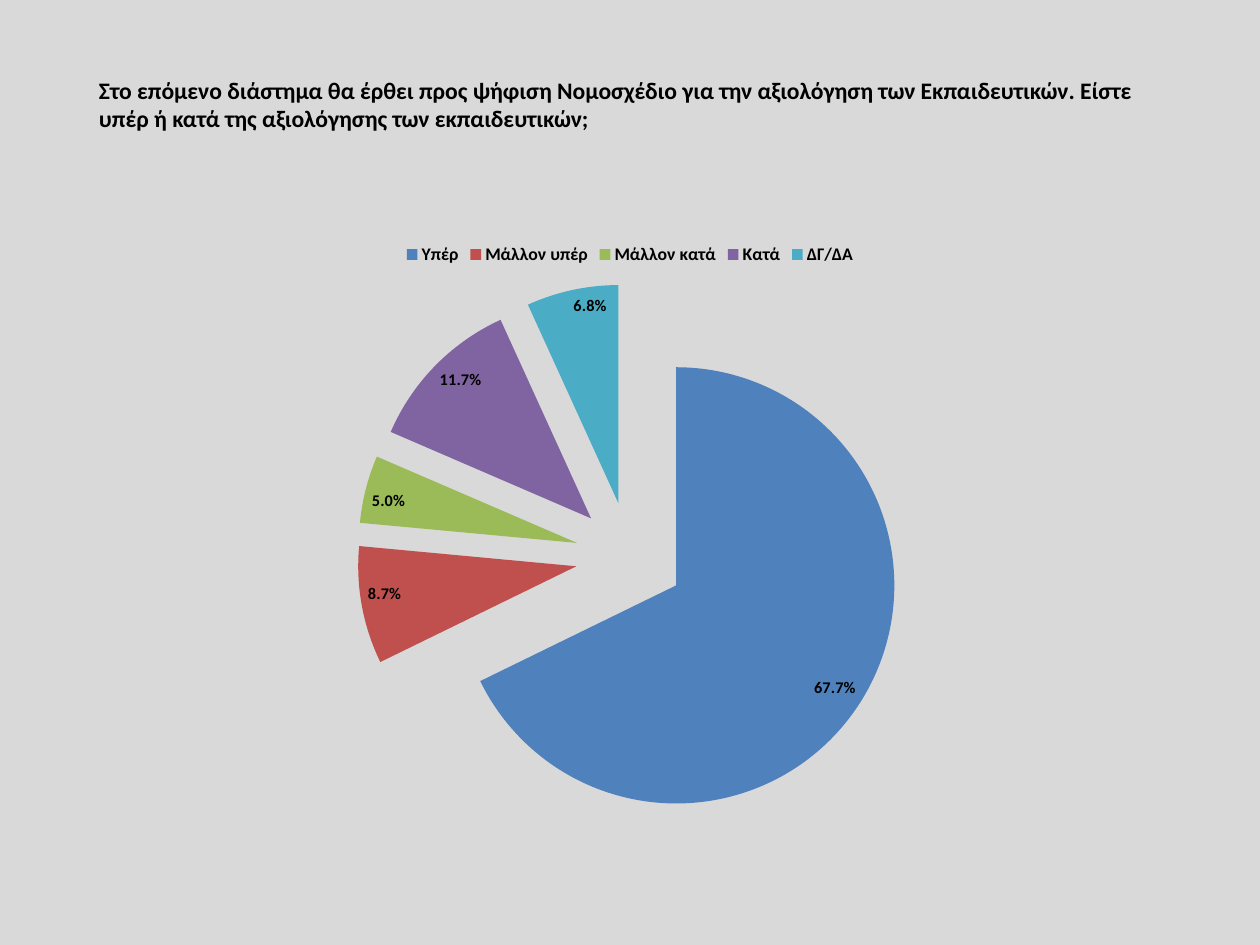
from lxml import etree
from pptx import Presentation
from pptx.chart.data import CategoryChartData
from pptx.dml.color import RGBColor
from pptx.enum.chart import XL_CHART_TYPE as ChartType
from pptx.enum.chart import XL_LABEL_POSITION as LabelPos
from pptx.enum.chart import XL_LEGEND_POSITION as LegendPos
from pptx.enum.text import MSO_ANCHOR
from pptx.oxml.ns import qn
from pptx.util import Inches, Pt

QUESTION = ("Στο επόμενο διάστημα θα έρθει προς ψήφιση Νομοσχέδιο για την "
            "αξιολόγηση των Εκπαιδευτικών. Είστε υπέρ ή κατά της αξιολόγησης "
            "των εκπαιδευτικών;")
ANSWERS = [
    ("Υπέρ", 67.7, "4F81BD"),
    ("Μάλλον υπέρ", 8.7, "C0504D"),
    ("Μάλλον κατά", 5.0, "9BBB59"),
    ("Κατά", 11.7, "8064A2"),
    ("ΔΓ/ΔΑ", 6.8, "4BACC6"),
]


def rgb(value):
    return RGBColor.from_string(value)


class PollSlide:
    font_name = "Calibri"
    text_color = "000000"
    background = "D9D9D9"

    def __init__(self, prs):
        self.slide = prs.slides.add_slide(prs.slide_layouts[6])
        fill = self.slide.background.fill
        fill.solid()
        fill.fore_color.rgb = rgb(self.background)

    def style_font(self, font, size, bold=True):
        font.name = self.font_name
        font.size = Pt(size)
        font.bold = bold
        font.color.rgb = rgb(self.text_color)

    def title(self, text, left, top, width, height):
        box = self.slide.shapes.add_textbox(
            Inches(left), Inches(top), Inches(width), Inches(height))
        tf = box.text_frame
        tf.word_wrap = True
        tf.vertical_anchor = MSO_ANCHOR.MIDDLE
        tf.margin_left = tf.margin_right = Inches(0.12)
        tf.margin_top = tf.margin_bottom = Inches(0.06)
        tf.text = text
        self.style_font(tf.paragraphs[0].runs[0].font, 16)

    def exploded_pie(self, answers, left, top, width, height, explosion):
        names, values, colors = zip(*answers)
        data = CategoryChartData()
        data.categories = names
        data.add_series("Series 1", values)
        chart = self.slide.shapes.add_chart(
            ChartType.PIE, Inches(left), Inches(top),
            Inches(width), Inches(height), data).chart
        chart.has_title = False
        self.style_font(chart.font, 10, bold=False)

        chart.has_legend = True
        chart.legend.position = LegendPos.TOP
        chart.legend.include_in_layout = False
        self.style_font(chart.legend.font, 12)

        plot = chart.plots[0]
        plot.vary_by_categories = True
        series = plot.series[0]
        for i, color in enumerate(colors):
            fill = series.points[i].format.fill
            fill.solid()
            fill.fore_color.rgb = rgb(color)
        # The schema wants the explosion ahead of the data points
        element = etree.Element(qn("c:explosion"), val=str(explosion))
        series._element.find(qn("c:dPt")).addprevious(element)

        plot.has_data_labels = True
        labels = plot.data_labels
        labels.show_value = True
        labels.show_percentage = False
        labels.number_format = '0.0"%"'
        labels.number_format_is_linked = False
        labels.position = LabelPos.INSIDE_END
        self.style_font(labels.font, 11)


def main():
    prs = Presentation()
    prs.slide_width = Inches(11.84)
    prs.slide_height = Inches(8.88)
    poll = PollSlide(prs)
    poll.title(QUESTION, 0.81, 0.47, 10.21, 1.01)
    poll.exploded_pie(ANSWERS, 0.59, 2.18, 10.66, 5.75, explosion=25)
    prs.save("out.pptx")


if __name__ == "__main__":
    main()
